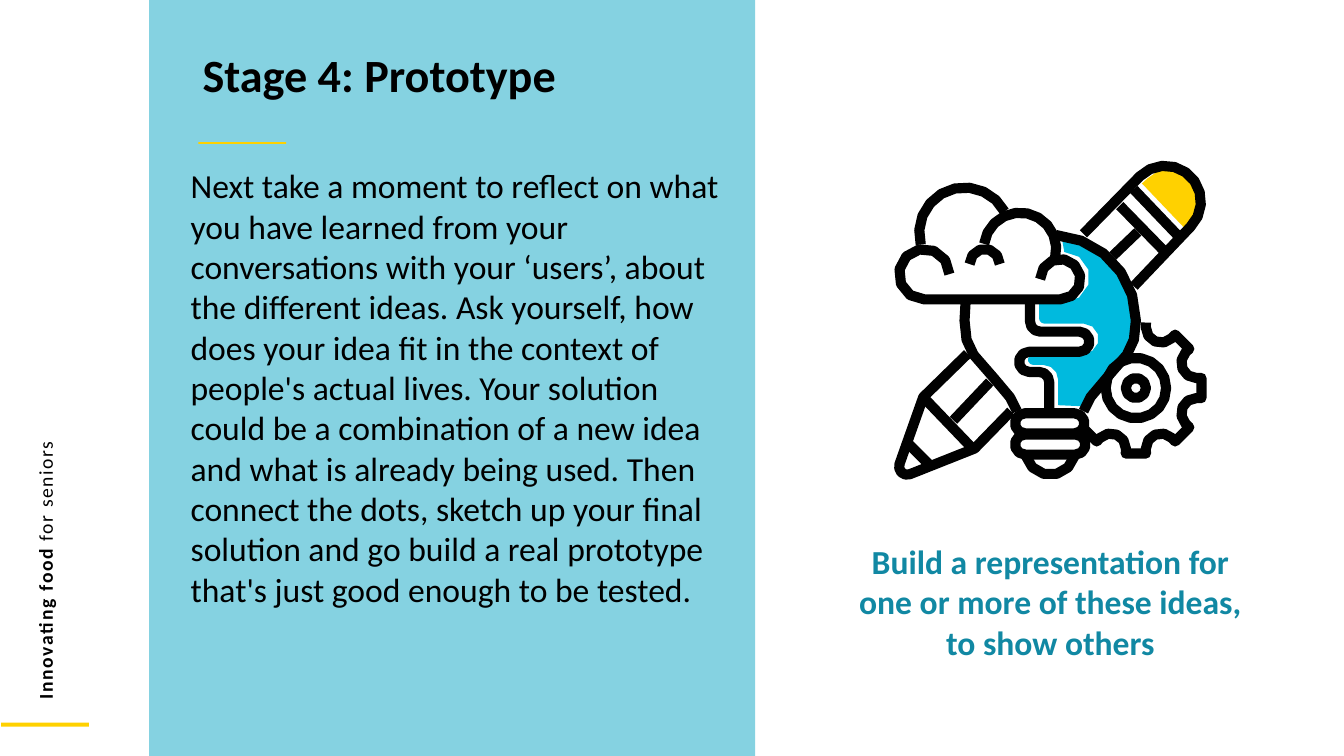
from math import ceil, cos, radians, sin

from lxml import etree
from pptx import Presentation
from pptx.dml.color import RGBColor
from pptx.enum.shapes import MSO_SHAPE
from pptx.enum.text import MSO_ANCHOR, MSO_AUTO_SIZE, PP_ALIGN
from pptx.oxml.ns import qn
from pptx.util import Cm, Pt

RECT = MSO_SHAPE.RECTANGLE
TOP = MSO_ANCHOR.TOP
NO_FIT = MSO_AUTO_SIZE.NONE
LEFT, CENTER = PP_ALIGN.LEFT, PP_ALIGN.CENTER
FONT = "Calibri"
COLORS = {"panel": "85D2E1", "yellow": "FFD100", "blue": "00BADE",
          "ink": "010101", "text": "000000", "teal": "1188A3"}
UNITS = 1000
BULB = (10.42, 3.18)
GEAR = (11.27, 3.85)
BODY = ("Next take a moment to reflect on what you have learned from your "
        "conversations with your ‘users’, about the different ideas. Ask yourself, "
        "how does your idea fit in the context of people's actual lives. Your "
        "solution could be a combination of a new idea and what is already being "
        "used. Then connect the dots, sketch up your final solution and go build a "
        "real prototype that's just good enough to be tested.")


def color(name):
    """Return the named colour."""
    return RGBColor.from_string(COLORS[name])


def add_bar(s, name, x, y, w, h):
    """Add a plain filled rectangle."""
    sp = s.shapes.add_shape(RECT, Cm(x), Cm(y), Cm(w), Cm(h))
    sp.shadow.inherit = False
    sp.fill.solid()
    sp.fill.fore_color.rgb = color(name)
    sp.line.fill.background()


def place(sp, x, y, w, h):
    """Set the position and size of a shape."""
    sp.left, sp.top, sp.width, sp.height = Cm(x), Cm(y), Cm(w), Cm(h)


def add_run(p, text, size, name="text", bold=False):
    """Add one formatted run to a paragraph."""
    r = p.add_run()
    r.text = text
    r.font.name, r.font.size, r.font.bold = FONT, Pt(size), bold
    r.font.color.rgb = color(name)
    return r


def setup_frame(sp, align=LEFT):
    """Make a text frame wrap from the top and return its first paragraph."""
    tf = sp.text_frame
    tf.word_wrap = True
    tf.auto_size = NO_FIT
    tf.vertical_anchor = TOP
    p = tf.paragraphs[0]
    p.alignment = align
    p.space_before = Pt(0)
    return p


def fill_placeholders(s):
    """Write the heading and the body text above the panel."""
    title, body = s.shapes.title, s.placeholders[1]
    for sp in (body, title):
        sp.element.getparent().append(sp.element)
    place(title, 4.85, 1.19, 14.17, 2.29)
    p = setup_frame(title)
    p.line_spacing = 0.9
    add_run(p, "Stage 4: Prototype", 33, bold=True)
    place(body, 3.91, 4.04, 14.78, 15.01)
    p = setup_frame(body)
    pPr = p._p.get_or_add_pPr()
    pPr.set("marL", str(Cm(0.64)))
    pPr.set("indent", "0")
    etree.SubElement(pPr, qn("a:buNone"))
    add_run(p, BODY, 24)


def add_side_label(s):
    """Add the vertical label on the left margin."""
    sp = s.shapes.add_textbox(Cm(-8.43), Cm(7.87), Cm(19.15), Cm(0.86))
    sp.rotation = 270
    p = setup_frame(sp)
    for text, bold in (("Innovating food ", True), ("for seniors", False)):
        r = add_run(p, text, 14, bold=bold)
        r.font._element.set("spc", "110")


def add_caption(s):
    """Add the centred caption under the icon."""
    sp = s.shapes.add_textbox(Cm(21.06), Cm(13.51), Cm(10.82), Cm(3.33))
    p = setup_frame(sp, CENTER)
    add_run(p, "Build a representation for", 24, "teal", True)
    p = sp.text_frame.add_paragraph()
    p.alignment = CENTER
    add_run(p, "one or more of these ideas, to show others", 24, "teal", True)


def arc(x, y, radius, start, end):
    """Return points on a circular arc, with angles clockwise from the right."""
    n = ceil(abs(end - start) / (20 if radius > 0.25 else 36))
    angles = [radians(start + (end - start) * i / n) for i in range(n + 1)]
    return [(x + radius * cos(a), y + radius * sin(a)) for a in angles]


def pill(x1, x2, y, radius):
    """Return the closed outline of a horizontal pill."""
    pts = arc(x1, y, radius, 90, 270) + arc(x2, y, radius, -90, 90)
    return pts + pts[:1]


def gear_teeth():
    """Return the toothed edge of the gear, from its top to its lower left."""
    cx, cy = GEAR
    pts = []
    for tooth in range(-90, 136, 45):
        c, d = cos(radians(tooth)), sin(radians(tooth))
        pts += [(cx + 0.65 * c - v * d, cy + 0.65 * d + v * c) for v in (-0.1, 0.1)]
        if tooth < 135:
            a = tooth + 22.5
            x, y = cx + 0.65 * cos(radians(a)), cy + 0.65 * sin(radians(a))
            pts += arc(x, y, 0.15, a + 247.5, a + 112.5)
    return pts[1:]


def icon_lines():
    """Return the strokes of the pencil, bulb, cloud and gear."""
    side = [(11.25, 3.37), (11.18, 3.52), (10.98, 3.75), (10.82, 3.94), (10.75, 4.08)]
    mirrored = [(2 * BULB[0] - x, y) for x, y in side]
    pencil = [
        [(10.75, 2.32)] + arc(11.56, 2, 0.355, 225, 405) + [(11.25, 2.84)],
        [(11.25, 1.88), (11.68, 2.33)],
        [(11.11, 2.04), (11.54, 2.48)],
        [(11.29, 2.3), (11.04, 2.54)],
        [(9.6, 3.51), (9.16, 3.94)] + arc(9, 4.63, 0.08, 200, 70)
        + [(9.67, 4.45), (10.03, 4.08)],
        [(9.17, 3.95), (9.63, 4.43)],
        [(9.46, 4.17), (9.82, 3.79)],
        [(9.02, 4.41), (9.22, 4.61)]]
    bulb = [
        arc(*BULB, 0.85, -86, 0) + side,
        [(9.58, 3), (9.57, 3.18)] + mirrored,
        [(10.22, 3)] + arc(10.32, 3.19, 0.1, 180, 90) + arc(10.71, 3.39, 0.1, -90, 90)
        + arc(10.21, 3.59, 0.1, 270, 90) + arc(10.31, 3.79, 0.1, 270, 360)
        + [(10.41, 4.08)],
        pill(10.17, 10.66, 4.2, 0.1),
        pill(10.17, 10.67, 4.41, 0.1),
        arc(10.42, 4.46, 0.25, 15, 165)]
    cloud = [
        arc(10.52, 2.77, 0.2, 180, 450) + arc(9.17, 2.72, 0.25, 90, 360),
        arc(9.57, 2.31, 0.45, 165, 332),
        arc(10.12, 2.47, 0.36, 188, 375),
        arc(9.77, 2.62, 0.15, 180, 360)]
    gear = [gear_teeth(), arc(*GEAR, 0.3, 0, 360), arc(*GEAR, 0.1, 0, 360)]
    return pencil + bulb + cloud + gear


def bulb_fill():
    """Return the outline of the coloured half of the bulb."""
    return (arc(10.45, 3.15, 0.8, -84, 0)
            + [(11.23, 3.35), (11.16, 3.5), (10.98, 3.69), (10.82, 3.87),
               (10.73, 4.03), (10.5, 4.02)]
            + arc(10.35, 3.77, 0.15, 0, -90)
            + arc(10.25, 3.57, 0.05, 90, 270) + arc(10.75, 3.36, 0.15, 90, -90)
            + arc(10.36, 3.16, 0.05, 90, 180) + [(10.31, 3.01)]
            + arc(10.56, 2.75, 0.25, 90, -90))


def add_outline(group, contours, name, stroke=None):
    """Add a freeform that is either filled or drawn with a stroke."""
    fb = None
    for contour in contours:
        pts = [(round(x * UNITS), round(y * UNITS)) for x, y in contour]
        if fb is None:
            fb = group.shapes.build_freeform(*pts[0], scale=Cm(2.54) / UNITS)
        else:
            fb.move_to(*pts[0])
        fb.add_line_segments(pts[1:], close=stroke is None)
    sp = fb.convert_to_shape()
    sp.shadow.inherit = False
    if stroke:
        sp.fill.background()
        sp.line.color.rgb = color(name)
        sp.line.width = Pt(stroke)
    else:
        sp.fill.solid()
        sp.fill.fore_color.rgb = color(name)
        sp.line.fill.background()


def add_icon(s):
    """Draw the prototype icon as one group."""
    group = s.shapes.add_group_shape()
    eraser = arc(11.6, 1.98, 0.3, 225, 405) + [(11.75, 2.26), (11.33, 1.82)]
    add_outline(group, [eraser], "yellow")
    add_outline(group, [bulb_fill()], "blue")
    add_outline(group, icon_lines(), "ink", 7.25)


def main():
    """Build and save the slide."""
    prs = Presentation()
    prs.slide_width, prs.slide_height = Cm(33.87), Cm(19.05)
    s = prs.slides.add_slide(prs.slide_layouts[1])
    add_bar(s, "panel", 3.76, 0, 15.27, 19.05)
    add_bar(s, "yellow", 0.03, 18.21, 2.21, 0.1)
    add_bar(s, "yellow", 5, 3.58, 2.21, 0.05)
    add_side_label(s)
    fill_placeholders(s)
    add_caption(s)
    add_icon(s)
    prs.save("out.pptx")


if __name__ == "__main__":
    main()
